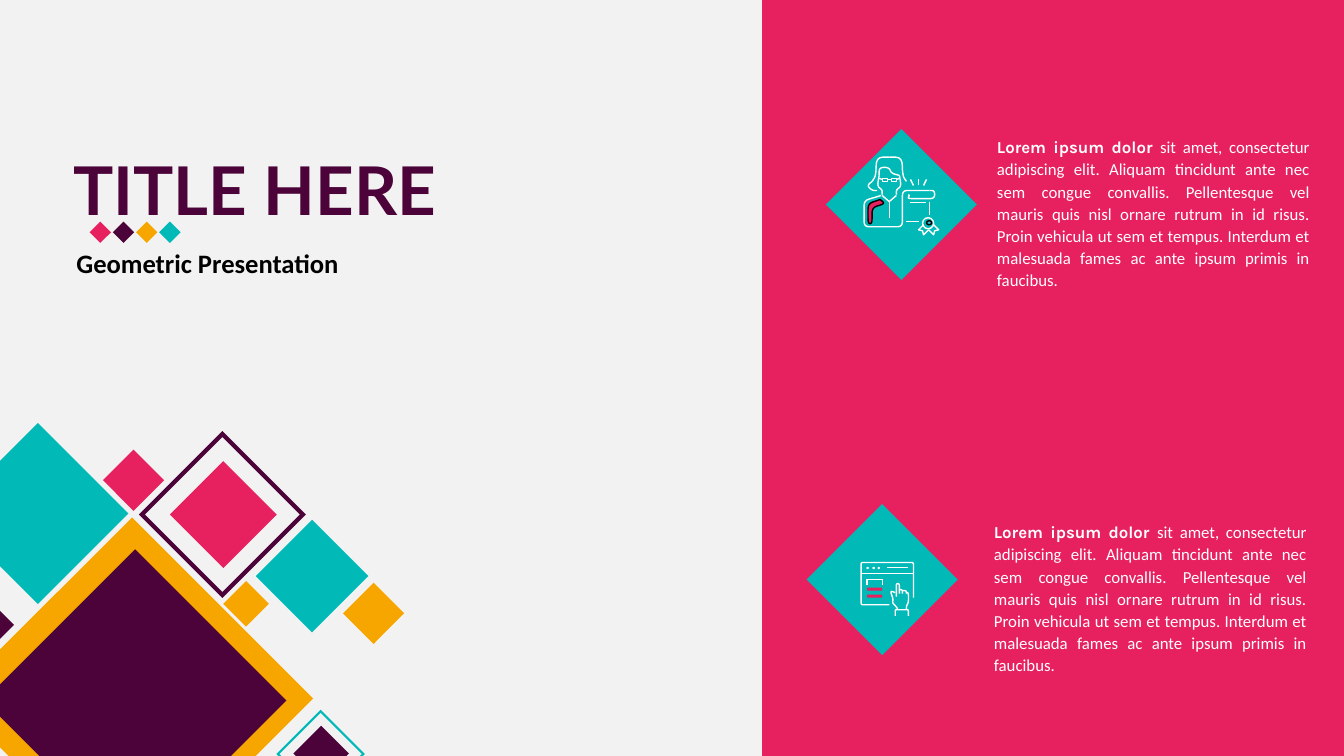
from lxml.etree import SubElement
from pptx import Presentation
from pptx.dml.color import RGBColor
from pptx.enum.shapes import MSO_CONNECTOR, MSO_SHAPE
from pptx.enum.text import PP_ALIGN
from pptx.oxml.ns import qn
from pptx.util import Inches, Pt

PINK, PLUM, GOLD, TEAL = "E7205F", "4C0339", "F7A600", "01B9B7"
WHITE, BLACK, PALE, SKY = "FFFFFF", "000000", "F2F2F2", "35B4CF"

LEAD = "Lorem ipsum dolor "
BODY = ("sit amet, consectetur adipiscing elit. Aliquam tincidunt ante nec sem "
        "congue convallis. Pellentesque vel mauris quis nisl ornare rutrum in id "
        "risus. Proin vehicula ut sem et tempus. Interdum et malesuada fames ac "
        "ante ipsum primis in faucibus.")
HEADS = [
    ("TITLE HERE", (0.63, 1.42, 3.93, 0.91), "Lato", 48, PLUM),
    ("Geometric Presentation", (0.66, 2.4, 2.84, 0.42), "Calibri", 19, BLACK),
]
NOTES = [(9.79, 1.29), (9.76, 5.11)]

# left, top, side, fill, line, weight
TILES = [
    (0.04, 5.66, 2.54, GOLD, None, 0),
    (-1.02, 5.72, 0.96, PLUM, None, 0),
    (-0.26, 4.46, 1.27, TEAL, None, 0),
    (1.64, 4.54, 1.13, None, PLUM, 3),
    (2.28, 5.83, 0.32, GOLD, None, 0),
    (3.49, 5.87, 0.43, GOLD, None, 0),
    (1.11, 4.55, 0.43, PINK, None, 0),
    (2.7, 5.32, 0.79, TEAL, None, 0),
    (2.88, 7.18, 0.6, None, TEAL, 1.5),
    (2.99, 7.28, 0.39, PLUM, None, 0),
    (0.3, 5.91, 2.08, PLUM, PLUM, 3),
    (1.84, 4.73, 0.75, PINK, None, 0),
]
BADGES = [(8.41, 1.5), (8.22, 5.22)]
DOTS = [PINK, PLUM, GOLD, TEAL]

# Icon units are hundredths of an inch from the icon's corner.
# Each stroke: corner radius, mirror axis, points.
WOMAN_AT = (8.57, 1.56)
FACE, RAYS, SEAL = 25, 54, 64
WOMAN = {
    "hair": (9, FACE, [(25, 0), (38, 0), (38, 18), (42, 24)]),
    "lock": (5, None, [(8, 24), (3, 28), (8, 33), (13, 33)]),
    "fringe": (5, None, [(35, 18), (27, 16), (25, 10), (15, 10), (15, 18)]),
    "cheek": (9, FACE, [(35, 18), (37, 29), (32, 32), (32, 37)]),
    "lens": (0, FACE, [(18, 21), (23, 21), (23, 24), (18, 24), (18, 21)]),
    "temple": (0, FACE, [(15, 21), (18, 22)]),
    "bridge": (0, None, [(23, 22), (27, 22)]),
    "collar": (0, FACE, [(25, 44), (32, 38)]),
    "seam": (0, None, [(25, 44), (25, 60)]),
    "coat": (5, None, [(17, 38), (0, 43), (0, 69), (38, 69), (38, 33), (65, 33)]),
    "scroll": (4, None, [(65, 33), (70, 33), (70, 41), (43, 41), (45, 38), (44, 37)]),
    "page": (0, None, [(46, 45), (61, 45)]),
    "edge": (0, None, [(65, 44), (65, 57)]),
    "foot": (0, None, [(42, 64), (54, 64)]),
    "beam": (0, None, [(54, 28), (54, 22)]),
    "ray": (0, RAYS, [(59, 28), (62, 22)]),
    "ribbon": (0, SEAL, [(64, 72), (59, 77), (58, 73), (54, 72), (59, 67)]),
}
SLEEVE = (5, None, [(16, 42), (4, 46), (4, 66), (8, 66), (8, 50), (21, 46), (16, 42)])

BROWSER_AT = (8.54, 5.58)
BROWSER = {
    "frame": (2, None, [(28, 42), (0, 42), (0, 0), (52, 0), (52, 35)]),
    "bar": (0, None, [(0, 11), (52, 11)]),
    "address": (0, None, [(26, 5), (47, 5)]),
    "panel": (0, None, [(6, 22), (6, 17), (21, 17), (21, 22)]),
    "pointer": (2, None, [(38, 31), (38, 21), (35, 21), (35, 34)]),
    "middle": (2, None, [(38, 27), (41, 27), (41, 31)]),
    "ring": (2, None, [(41, 28), (45, 28), (45, 31)]),
    "palm": (3, None, [(45, 30), (47, 30), (47, 40), (45, 43), (45, 47)]),
    "thumb": (3, None, [(34, 30), (29, 28), (32, 37), (31, 40), (36, 45), (36, 47)]),
    "cuff": (1, None, [(34, 53), (34, 47), (47, 47), (47, 53)]),
}

deck = Presentation()
deck.slide_width, deck.slide_height = Inches(13.33), Inches(7.5)
slide = deck.slides.add_slide(deck.slide_layouts[6])
shapes = slide.shapes


def paint(target, shade):
    if shade:
        target.solid()
        target.fore_color.rgb = RGBColor.from_string(shade)
    else:
        target.background()


def style(shape, fill, line, weight=1):
    shape.shadow.inherit = False
    paint(shape.fill, fill)
    paint(shape.line.fill, line)
    if line:
        shape.line.width = Pt(weight)


def block(box, fill=None, line=None, weight=1, kind=MSO_SHAPE.RECTANGLE):
    shape = shapes.add_shape(kind, *map(Inches, box))
    style(shape, fill, line, weight)
    return shape


def tile(x, y, side, fill, line=None, weight=1):
    shape = block((x, y, side, side), fill, line, weight)
    shape.rotation = 45
    if line:
        SubElement(shape.line._get_or_add_ln(), qn("a:miter"), lim="800000")


def text(box, runs, wrap=False):
    frame = shapes.add_textbox(*map(Inches, box)).text_frame
    frame.word_wrap = wrap
    para = frame.paragraphs[0]
    for words, face, size, shade, bold in runs:
        run = para.add_run()
        run.text = words
        run.font.name, run.font.size, run.font.bold = face, Pt(size), bold
        paint(run.font.fill, shade)
    return para


def blend(a, b, t):
    return tuple(p + (q - p) * t for p, q in zip(a, b))


def toward(a, b, reach):
    span = ((b[0] - a[0]) ** 2 + (b[1] - a[1]) ** 2) ** 0.5
    return blend(a, b, min(reach / span, 0.5))


def soften(points, radius):
    path = [points[0]]
    for last, turn, after in zip(points, points[1:], points[2:]):
        start, end = toward(turn, last, radius), toward(turn, after, radius)
        for t in (0, 0.25, 0.5, 0.75, 1) if radius else (0,):
            path.append(blend(blend(start, turn, t), blend(turn, end, t), t))
    return path + [points[-1]]


def trace(corner, points, fill=None, line=WHITE):
    spots = [tuple(Inches(c + p / 100) for c, p in zip(corner, spot))
             for spot in points]
    if len(spots) == 2:
        link = shapes.add_connector(MSO_CONNECTOR.STRAIGHT, *spots[0], *spots[1])
        paint(link.line.fill, line)
        link.line.width = Pt(1)
        SubElement(link._element.spPr, qn("a:effectLst"))
    else:
        pen = shapes.build_freeform(*spots[0])
        pen.add_line_segments(spots[1:], close=points[0] == points[-1])
        style(pen.convert_to_shape(), fill, line)


def stroke(corner, radius, axis, points, fill=None, line=WHITE):
    path = soften(points, radius)
    trace(corner, path, fill, line)
    if axis is not None:
        trace(corner, [(2 * axis - x, y) for x, y in path], fill, line)


def piece(corner, x, y, w, h, *look, **more):
    block((corner[0] + x / 100, corner[1] + y / 100, w / 100, h / 100), *look, **more)


paint(slide.background.fill, PALE)
for item in TILES:
    tile(*item)
block((7.56, 0, 5.77, 7.5), PINK)
for words, box, face, size, shade in HEADS:
    text(box, [(words, face, size, shade, True)])
for x, y in NOTES:
    para = text((x, y, 3.3, 1.64), [(LEAD, "Karla", 12, WHITE, True),
                                    (BODY, "Calibri", 12, WHITE, False)], True)
    para.alignment, para.line_spacing = PP_ALIGN.JUSTIFY, 1.1
for x, y in BADGES:
    tile(x, y, 1.06, TEAL)
for i, shade in enumerate(DOTS):
    tile(0.92 + 0.23 * i, 2.23, 0.15, shade)

for corner, icon in ((WOMAN_AT, WOMAN), (BROWSER_AT, BROWSER)):
    for parts in icon.values():
        stroke(corner, *parts)
stroke(WOMAN_AT, *SLEEVE, fill=PINK, line=BLACK)
piece(WOMAN_AT, 58, 60, 11, 11, None, WHITE, kind=MSO_SHAPE.OVAL)
piece(WOMAN_AT, 62, 63, 5, 4, SKY, BLACK, kind=MSO_SHAPE.OVAL)
for x in (6, 12, 17):
    piece(BROWSER_AT, x, 5, 1, 1, None, WHITE, kind=MSO_SHAPE.OVAL)
for y in (25, 32):
    piece(BROWSER_AT, 6, y, 15, 3, PINK)

deck.save("out.pptx")
